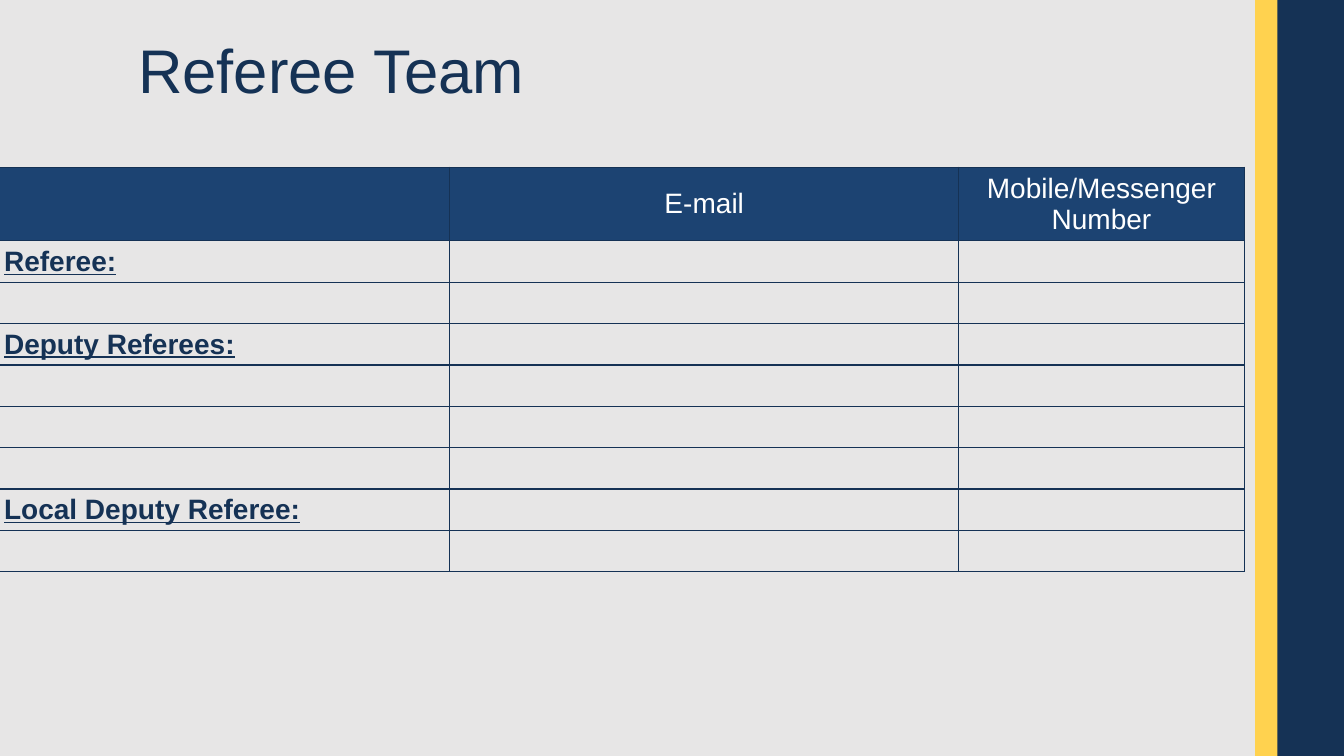
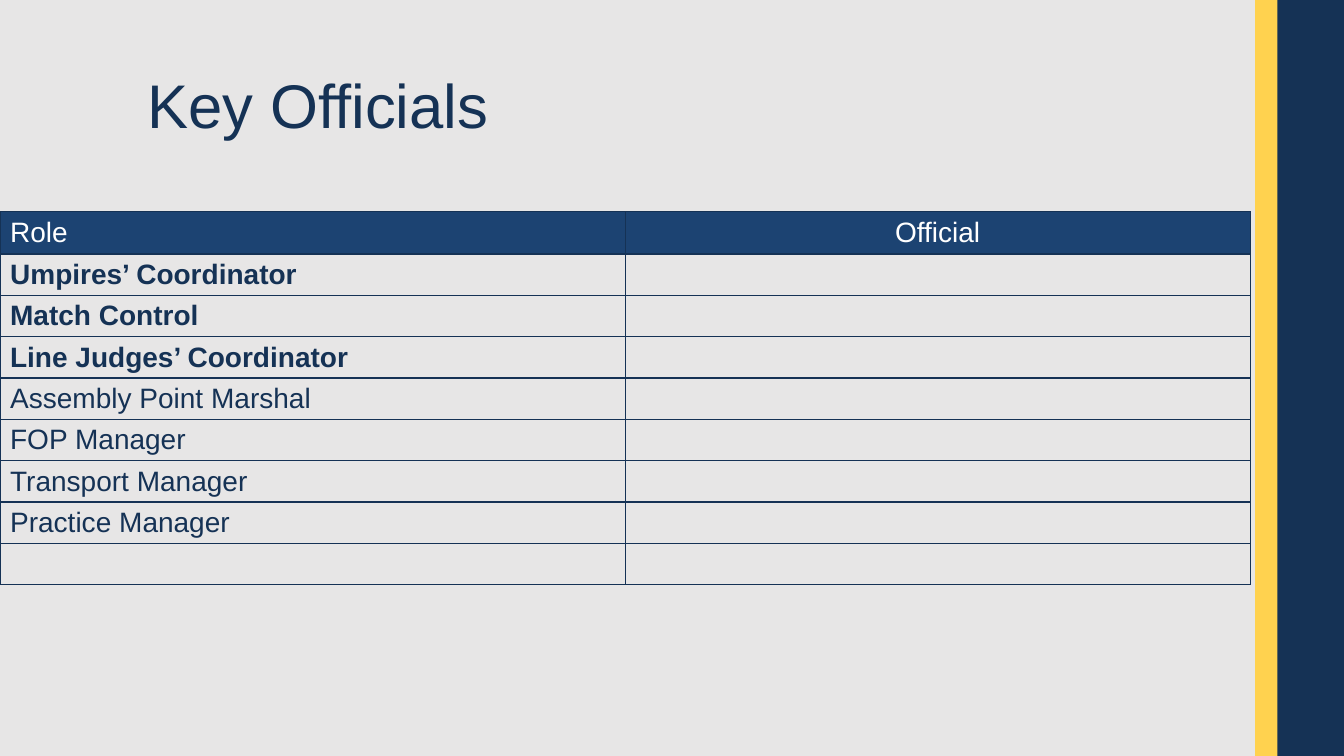
"""Build the referee team and key officials slides."""
from dataclasses import dataclass

from lxml import etree
from pptx import Presentation
from pptx.dml.color import RGBColor
from pptx.enum import shapes, text
from pptx.oxml import ns
from pptx.util import Inches, Pt


@dataclass(frozen=True)
class Theme:
    font: str = "Arial"
    back: str = "E7E6E6"
    navy: str = "153255"
    blue: str = "1C4372"
    gold: str = "FFD24F"
    white: str = "FFFFFF"
    title: int = 44
    body: int = 20


theme = Theme()
LEFT, MID = text.PP_ALIGN.LEFT, text.PP_ALIGN.CENTER


def style(para, size, color, align=LEFT, bold=False, under=False):
    para.alignment = align
    font = para.font
    font.name, font.size = theme.font, Pt(size)
    font.bold, font.underline = bold, under
    font.color.rgb = RGBColor.from_string(color)


def border(cell):
    props = cell._tc.get_or_add_tcPr()
    for side in ("lnL", "lnR", "lnT", "lnB"):
        line = etree.SubElement(props, ns.qn(f"a:{side}"), w=str(Pt(1)))
        fill = etree.SubElement(line, ns.qn("a:solidFill"))
        etree.SubElement(fill, ns.qn("a:srgbClr"), val=theme.navy)


pages = [
    dict(title="Referee Team", spot=(1.27, 0), place=(-0.06, 1.66),
         cols=(4.52, 5.05, 2.83), top=0.73, under=True,
         head=("", "E-mail", "Mobile/Messenger Number"),
         rows=("Referee:", "", "Deputy Referees:", "", "", "",
               "Local Deputy Referee:", ""),
         bold=8),
    dict(title="Key Officials", spot=(1.36, 0.35), place=(0, 2.1),
         cols=(6.2, 6.2), top=0.42, under=False,
         head=("Role", "Official"),
         rows=("Umpires’ Coordinator", "Match Control",
               "Line Judges’ Coordinator", "Assembly Point Marshal",
               "FOP Manager", "Transport Manager", "Practice Manager", ""),
         bold=3),
]

deck = Presentation()
deck.slide_width, deck.slide_height = Inches(13.33), Inches(7.5)
layout = deck.slide_layouts[5]
master = deck.slide_master
master.background.fill.solid()
master.background.fill.fore_color.rgb = RGBColor.from_string(theme.back)
slides = [deck.slides.add_slide(layout) for page in pages]

for left, width, color in ((12.45, 2.07, theme.gold),
                           (12.67, 1.85, theme.navy)):
    band = slides[0].shapes.add_shape(
        shapes.MSO_SHAPE.RECTANGLE, Inches(left), 0,
        Inches(width), deck.slide_height)
    band.shadow.inherit = False
    band.fill.solid()
    band.fill.fore_color.rgb = RGBColor.from_string(color)
    band.line.fill.background()
    master.shapes.element.append(band.element)

for slide, page in zip(slides, pages):
    title = slide.shapes.title
    title.left, title.top = (Inches(n) for n in page["spot"])
    title.width, title.height = Inches(9.74), Inches(1.45)
    title.text_frame.text = page["title"]
    title.text_frame.vertical_anchor = text.MSO_ANCHOR.MIDDLE
    para = title.text_frame.paragraphs[0]
    para.line_spacing = 0.9
    style(para, theme.title, theme.navy)

    cols = page["cols"]
    tall = [page["top"]] + [0.41] * len(page["rows"])
    x, y = page["place"]
    grid = slide.shapes.add_table(
        len(tall), len(cols), Inches(x), Inches(y),
        Inches(sum(cols)), Inches(sum(tall))).table
    grid.first_row = grid.horz_banding = False
    for col, width in zip(grid.columns, cols):
        col.width = Inches(width)
    for row, height in zip(grid.rows, tall):
        row.height = Inches(height)

    for r in range(len(tall)):
        for c in range(len(cols)):
            cell = grid.cell(r, c)
            border(cell)
            cell.vertical_anchor = text.MSO_ANCHOR.MIDDLE
            para = cell.text_frame.paragraphs[0]
            if r == 0:
                cell.fill.solid()
                cell.fill.fore_color.rgb = RGBColor.from_string(theme.blue)
                para.text = page["head"][c]
                style(para, theme.body, theme.white, MID if c else LEFT)
            else:
                cell.fill.background()
                para.text = page["rows"][r - 1] if c == 0 else ""
                style(para, theme.body, theme.navy,
                      bold=r <= page["bold"], under=page["under"])

deck.save("out.pptx")
